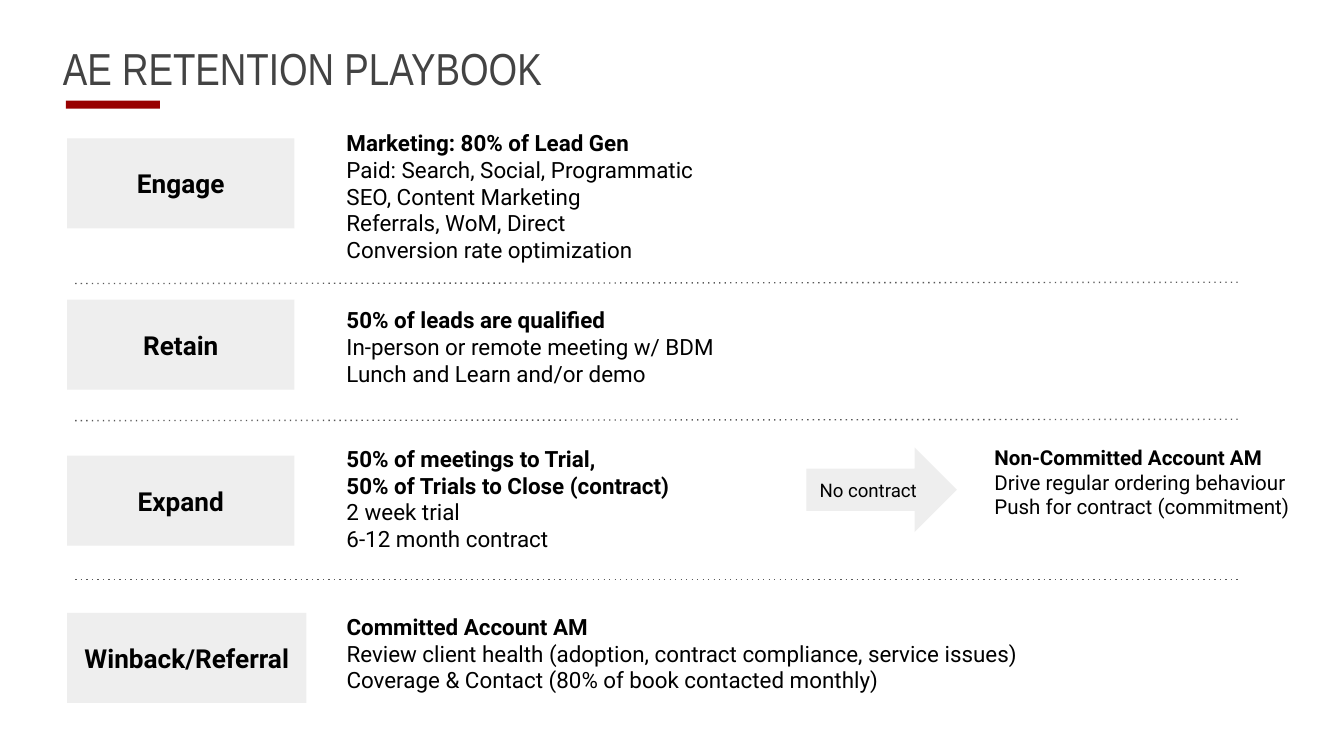
from dataclasses import dataclass

from lxml.etree import SubElement
from pptx import Presentation
from pptx.dml.color import RGBColor
from pptx.enum.shapes import MSO_CONNECTOR, MSO_SHAPE
from pptx.enum.text import MSO_ANCHOR, PP_ALIGN
from pptx.oxml.ns import qn
from pptx.shapes.autoshape import Shape
from pptx.slide import Slide
from pptx.util import Inches, Pt

BLACK = RGBColor(0x00, 0x00, 0x00)
TITLE_GREY = RGBColor(0x43, 0x43, 0x43)
LINE_GREY = RGBColor(0x59, 0x59, 0x59)
PALE_GREY = RGBColor(0xEE, 0xEE, 0xEE)
DARK_RED = RGBColor(0x98, 0x00, 0x00)

STAGE_LEFT, STAGE_HEIGHT = 0.5, 0.67
DETAIL_LEFT, DETAIL_HEIGHT = 2.48, 0.87
DIVIDER_LEFT, DIVIDER_RIGHT = 0.56, 9.22


@dataclass
class Box:
    left: float
    top: float
    width: float
    height: float

    def lengths(self) -> list[int]:
        return [Inches(v) for v in (self.left, self.top, self.width, self.height)]


@dataclass
class Stage:
    name: str
    top: float
    width: float
    detail_top: float
    detail_width: float
    headings: list[str]
    details: list[str]


STAGES = [
    Stage("Engage", 1.03, 1.69, 0.86, 2.87,
          ["Marketing: 80% of Lead Gen"],
          ["Paid: Search, Social, Programmatic", "SEO, Content Marketing",
           "Referrals, WoM, Direct", "Conversion rate optimization"]),
    Stage("Retain", 2.23, 1.69, 2.18, 2.96,
          ["50% of leads are qualified"],
          ["In-person or remote meeting w/ BDM", "Lunch and Learn and/or demo"]),
    Stage("Expand", 3.39, 1.69, 3.21, 3.1,
          ["50% of meetings to Trial,", "50% of Trials to Close (contract)"],
          ["2 week trial", "6-12 month contract"]),
    Stage("Winback/Referral", 4.56, 1.78, 4.46, 6.22,
          ["Committed Account AM"],
          ["Review client health (adoption, contract compliance, service issues)",
           "Coverage & Contact (80% of book contacted monthly)"]),
]
DIVIDERS = [(2.11, 2.1), (3.13, 3.12), (4.31, 4.31)]


def write_lines(sp: Shape, headings: list[str], details: list[str], size: float,
                font: str = "Roboto", color: RGBColor = BLACK,
                align: PP_ALIGN = PP_ALIGN.LEFT,
                anchor: MSO_ANCHOR = MSO_ANCHOR.TOP) -> None:
    tf = sp.text_frame
    tf.word_wrap = True
    tf.vertical_anchor = anchor
    tf.margin_left = tf.margin_right = tf.margin_top = tf.margin_bottom = Inches(0.1)
    tf.text = "\n".join(headings + details)
    for i, p in enumerate(tf.paragraphs):
        p.alignment = align
        for r in p.runs:
            r.font.name = font
            r.font.size = Pt(size)
            r.font.bold = i < len(headings)
            r.font.color.rgb = color


def add_block(s: Slide, kind: MSO_SHAPE, box: Box, fill: RGBColor) -> Shape:
    sp = s.shapes.add_shape(kind, *box.lengths())
    sp.shadow.inherit = False
    sp.fill.solid()
    sp.fill.fore_color.rgb = fill
    sp.line.fill.background()
    return sp


def add_text(s: Slide, box: Box) -> Shape:
    return s.shapes.add_textbox(*box.lengths())


def add_divider(s: Slide, start: float, end: float) -> None:
    line = s.shapes.add_connector(MSO_CONNECTOR.STRAIGHT,
                                  Inches(DIVIDER_LEFT), Inches(start),
                                  Inches(DIVIDER_RIGHT), Inches(end))
    line.line.color.rgb = LINE_GREY
    line.line.width = Pt(0.75)
    spPr = line._element.spPr
    SubElement(spPr.find(qn("a:ln")), qn("a:prstDash"), val="dot")
    SubElement(spPr, qn("a:effectLst"))


def add_stage(s: Slide, stage: Stage) -> None:
    block = add_block(s, MSO_SHAPE.RECTANGLE,
                      Box(STAGE_LEFT, stage.top, stage.width, STAGE_HEIGHT), PALE_GREY)
    write_lines(block, [stage.name], [], 14,
                align=PP_ALIGN.CENTER, anchor=MSO_ANCHOR.MIDDLE)
    detail = add_text(s, Box(DETAIL_LEFT, stage.detail_top,
                             stage.detail_width, DETAIL_HEIGHT))
    write_lines(detail, stage.headings, stage.details, 12)


def main() -> None:
    prs = Presentation()
    prs.slide_width = Inches(10)
    prs.slide_height = prs.slide_width * 9 // 16
    s = prs.slides.add_slide(prs.slide_layouts[6])

    add_block(s, MSO_SHAPE.RECTANGLE, Box(0.49, 0.75, 0.7, 0.06), DARK_RED)
    title = add_text(s, Box(0.37, 0.2, 9.32, 0.63))
    write_lines(title, [], ["AE RETENTION PLAYBOOK"], 24, "Arial Narrow", TITLE_GREY)

    for stage in STAGES:
        add_stage(s, stage)
    for start, end in DIVIDERS:
        add_divider(s, start, end)

    arrow = add_block(s, MSO_SHAPE.RIGHT_ARROW, Box(6, 3.33, 1.12, 0.63), PALE_GREY)
    write_lines(arrow, [], ["No contract"], 10, anchor=MSO_ANCHOR.MIDDLE)
    account = add_text(s, Box(7.3, 3.21, 2.58, 1.01))
    write_lines(account, ["Non-Committed Account AM"],
                ["Drive regular ordering behaviour", "Push for contract (commitment)"], 11)

    prs.save("out.pptx")


if __name__ == "__main__":
    main()
